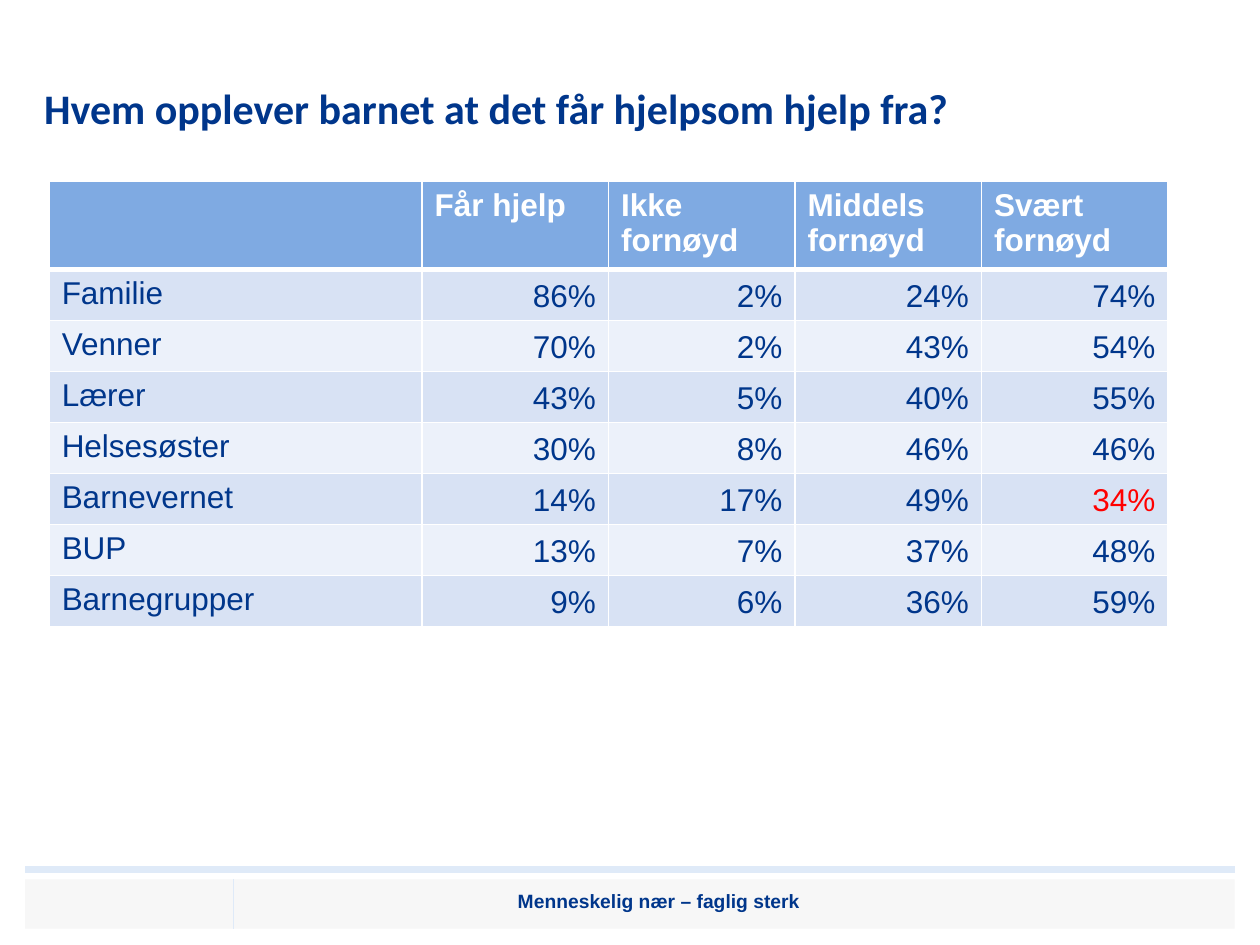
from lxml.etree import SubElement
from pptx import Presentation
from pptx.dml.color import RGBColor
from pptx.enum.shapes import MSO_CONNECTOR as Connector, MSO_SHAPE as Shape
from pptx.enum.text import MSO_ANCHOR as Anchor, PP_ALIGN as Align
from pptx.oxml.ns import qn
from pptx.util import Inches, Pt

COLORS = {
    "navy": "00368B",
    "header": "7FAAE2",
    "band_dark": "D8E2F4",
    "band_light": "ECF1FA",
    "rule": "DFEAF8",
    "footer": "F7F7F7",
    "alert": "FF0000",
    "white": "FFFFFF",
}
HEADINGS = ["", "Får hjelp", "Ikke fornøyd", "Middels fornøyd", "Svært fornøyd"]
HELPERS = [
    ["Familie", "86%", "2%", "24%", "74%"],
    ["Venner", "70%", "2%", "43%", "54%"],
    ["Lærer", "43%", "5%", "40%", "55%"],
    ["Helsesøster", "30%", "8%", "46%", "46%"],
    ["Barnevernet", "14%", "17%", "49%", "34%"],
    ["BUP", "13%", "7%", "37%", "48%"],
    ["Barnegrupper", "9%", "6%", "36%", "59%"],
]
COLUMN_WIDTHS = [2.96] + [1.48] * 4
ROW_HEIGHTS = [0.7] + [0.405] * len(HELPERS)
LOW_SCORE = "34%"


def rgb(name):
    """Return the palette colour with this name."""
    return RGBColor.from_string(COLORS[name])


def write(frame, text, size, color, bold=False, font="Arial", align=Align.LEFT):
    """Fill a text frame with one formatted paragraph."""
    frame.word_wrap = True
    paragraph = frame.paragraphs[0]
    paragraph.text = text
    paragraph.alignment = align
    paragraph.font.name = font
    paragraph.font.size = Pt(size)
    paragraph.font.bold = bold
    paragraph.font.color.rgb = rgb(color)


def clear_margins(frame):
    """Remove the inner margins of a text frame."""
    frame.margin_left = frame.margin_top = frame.margin_right = frame.margin_bottom = 0


def add_rule(slide, start, end, width):
    """Draw a pale straight line."""
    rule = slide.shapes.add_connector(Connector.STRAIGHT, *map(Inches, start + end))
    rule.line.color.rgb = rgb("rule")
    rule.line.width = Pt(width)
    SubElement(rule._element.spPr, qn("a:effectLst"))


def add_footer(slide):
    """Add the footer band, its rules and the motto."""
    band = slide.shapes.add_shape(
        Shape.RECTANGLE, Inches(0.2), Inches(6.98), Inches(9.6), Inches(0.39))
    band.shadow.inherit = False
    band.fill.solid()
    band.fill.fore_color.rgb = rgb("footer")
    band.line.fill.background()
    add_rule(slide, (0.2, 6.9), (9.8, 6.9), 4)
    add_rule(slide, (1.85, 6.98), (1.85, 7.37), 0.5)
    motto = slide.shapes.add_textbox(
        Inches(2.16), Inches(7.06), Inches(6.14), Inches(0.31)).text_frame
    clear_margins(motto)
    write(motto, "Menneskelig nær – faglig sterk", 11, "navy", True, align=Align.CENTER)


def add_title(slide):
    """Place and format the title."""
    title = slide.shapes.title
    title.left, title.top = Inches(0.35), Inches(0.52)
    title.width, title.height = Inches(8.9), Inches(0.67)
    clear_margins(title.text_frame)
    title.text_frame.vertical_anchor = Anchor.MIDDLE
    write(title.text_frame, "Hvem opplever barnet at det får hjelpsom hjelp fra?",
          24, "navy", True, "Calibri")


def set_borders(cell, top, bottom):
    """Give a cell white borders, with top and bottom widths in points."""
    properties = cell._tc.get_or_add_tcPr()
    for side, width in (("L", 1), ("R", 1), ("T", top), ("B", bottom)):
        border = SubElement(properties, qn(f"a:ln{side}"), w=str(Pt(width)))
        fill = SubElement(border, qn("a:solidFill"))
        SubElement(fill, qn("a:srgbClr"), val=COLORS["white"])


def format_cell(cell, text, row, column):
    """Write and style a cell according to its place in the table."""
    set_borders(cell, 3 if row == 1 else 1, 3 if row == 0 else 1)
    cell.fill.solid()
    if row == 0:
        cell.fill.fore_color.rgb = rgb("header")
        write(cell.text_frame, text, 18, "white", True)
        return
    cell.fill.fore_color.rgb = rgb("band_dark" if row % 2 else "band_light")
    cell.vertical_anchor = Anchor.BOTTOM if column else Anchor.TOP
    write(cell.text_frame, text, 18, "alert" if text == LOW_SCORE else "navy",
          align=Align.RIGHT if column else Align.LEFT)


def add_help_table(slide):
    """Add the table of helpers and satisfaction."""
    table = slide.shapes.add_table(
        len(ROW_HEIGHTS), len(COLUMN_WIDTHS), Inches(0.39), Inches(1.44),
        Inches(sum(COLUMN_WIDTHS)), Inches(sum(ROW_HEIGHTS))).table
    for column, width in zip(table.columns, COLUMN_WIDTHS):
        column.width = Inches(width)
    for row, height in zip(table.rows, ROW_HEIGHTS):
        row.height = Inches(height)
    for row, texts in enumerate([HEADINGS] + HELPERS):
        for column, text in enumerate(texts):
            format_cell(table.cell(row, column), text, row, column)


def main():
    """Build and save the slide."""
    presentation = Presentation()
    presentation.slide_width, presentation.slide_height = Inches(10), Inches(7.5)
    slide = presentation.slides.add_slide(presentation.slide_layouts[5])
    add_footer(slide)
    add_title(slide)
    add_help_table(slide)
    presentation.save("out.pptx")


if __name__ == "__main__":
    main()
